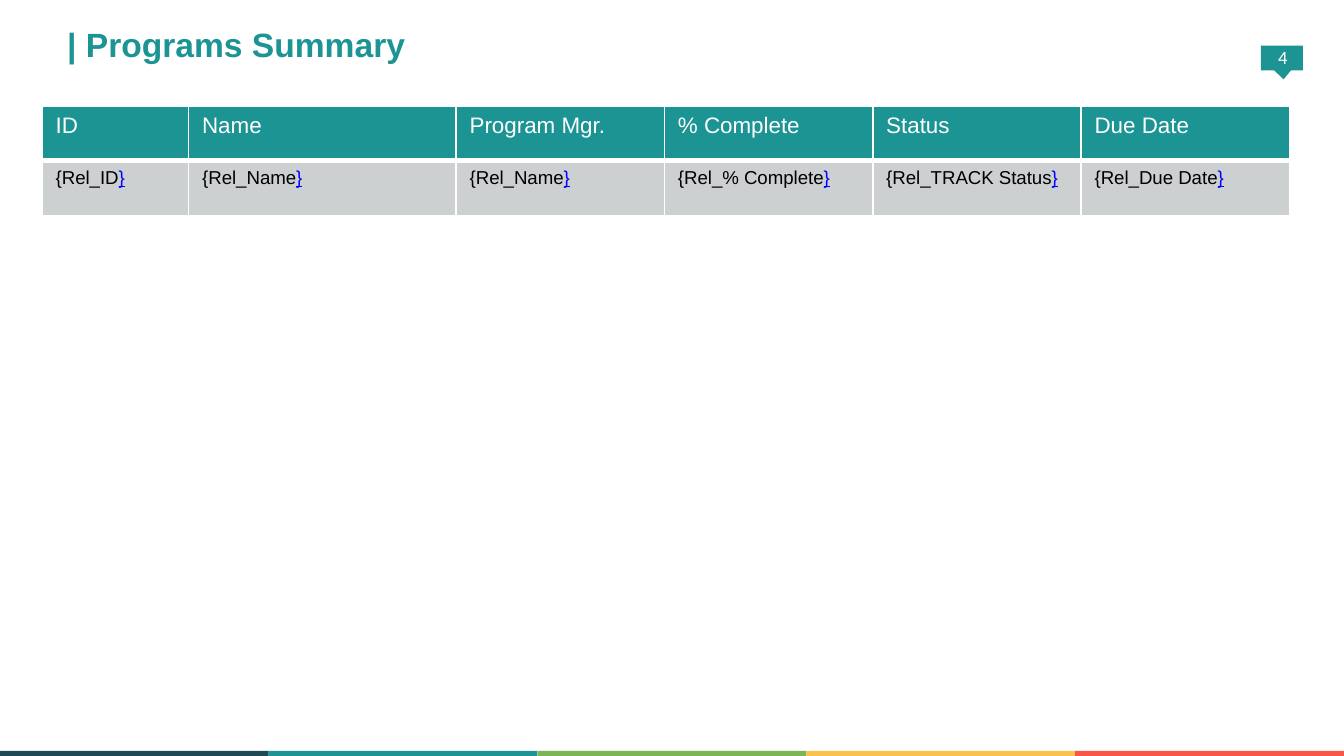
from dataclasses import dataclass

from lxml import etree
from pptx import Presentation
from pptx.dml.color import RGBColor
from pptx.enum import shapes, text
from pptx.oxml import ns
from pptx.util import Pt


@dataclass(frozen=True)
class Theme:
    """Colours, fonts and type sizes of the slide."""
    teal: str = "1C9494"
    white: str = "FFFFFF"
    black: str = "000000"
    link: str = "0000FF"
    row: str = "CDD0D1"
    stripes: tuple = ("1D4A53", "1C9494", "7CB554", "FAC14D", "F95647")
    font: str = "Arial"
    number_font: str = "Calibri"
    title_size: int = 18
    header_size: int = 12
    body_size: int = 10


THEME = Theme()
COLUMNS = (
    ("ID", "{Rel_ID", 78.5),
    ("Name", "{Rel_Name", 143.3),
    ("Program Mgr.", "{Rel_Name", 111.6),
    ("% Complete", "{Rel_% Complete", 111.6),
    ("Status", "{Rel_TRACK Status", 111.6),
    ("Due Date", "{Rel_Due Date", 111.6),
)


def add_run(paragraph, wording, size, color, font=THEME.font, bold=False, underline=False):
    """Append one formatted run to a paragraph."""
    run = paragraph.add_run()
    run.text = wording
    run.font.size = Pt(size)
    run.font.name = font
    run.font.bold = bold
    run.font.underline = underline
    run.font.color.rgb = RGBColor.from_string(color)


def add_block(parent, kind, box, color):
    """Add a plain filled shape without line or shadow."""
    block = parent.add_shape(kind, *map(Pt, box))
    block.fill.solid()
    block.fill.fore_color.rgb = RGBColor.from_string(color)
    block.line.fill.background()
    block.shadow.inherit = False
    return block


def set_frame(frame, anchor, insets):
    """Set anchor and left, top, right and bottom insets of a text frame."""
    frame.word_wrap = True
    frame.auto_size = text.MSO_AUTO_SIZE.NONE
    frame.vertical_anchor = anchor
    (frame.margin_left, frame.margin_top,
     frame.margin_right, frame.margin_bottom) = map(Pt, insets)


def add_footer_stripe(slide, box):
    """Divide the box into equal coloured bands."""
    left, top, width, height = box
    band = width / len(THEME.stripes)
    stripe = slide.shapes.add_group_shape()
    for i, color in enumerate(THEME.stripes):
        add_block(stripe.shapes, shapes.MSO_SHAPE.RECTANGLE,
                  (left + i * band, top, band, height), color)


def add_page_badge(slide, box, number):
    """Draw the page number on a flag with a downward pointer."""
    left, top, width, height = box
    add_block(slide.shapes, shapes.MSO_SHAPE.RECTANGLE,
              (left, top, width, height), THEME.teal)
    pointer = add_block(slide.shapes, shapes.MSO_SHAPE.ISOSCELES_TRIANGLE,
                        (left + 0.5, top + 5.8, width, 12.2), THEME.teal)
    pointer.rotation = 176.8
    label = slide.shapes.add_textbox(Pt(left + 1.2), Pt(top - 2.9), Pt(21), Pt(21.6))
    set_frame(label.text_frame, text.MSO_ANCHOR.MIDDLE, (0, 0, 0, 3.6))
    paragraph = label.text_frame.paragraphs[0]
    paragraph.alignment = text.PP_ALIGN.CENTER
    add_run(paragraph, number, THEME.body_size, THEME.white, THEME.number_font)


def place_title(slide, box, wording):
    """Move and format the title placeholder."""
    title = slide.shapes.title
    title.left, title.top, title.width, title.height = map(Pt, box)
    set_frame(title.text_frame, text.MSO_ANCHOR.TOP, (0, 0, 7.2, 0))
    paragraph = title.text_frame.paragraphs[0]
    paragraph.alignment = text.PP_ALIGN.LEFT
    add_run(paragraph, wording, THEME.title_size, THEME.teal, bold=True)


def style_cell(cell, color, bottom):
    """Give a cell white borders and a solid fill."""
    properties = cell._tc.get_or_add_tcPr()
    for side, weight in (("L", 1), ("R", 1), ("T", 1), ("B", bottom)):
        border = etree.SubElement(properties, ns.qn(f"a:ln{side}"), w=str(Pt(weight)))
        fill = etree.SubElement(border, ns.qn("a:solidFill"))
        etree.SubElement(fill, ns.qn("a:srgbClr"), val=THEME.white)
    cell.fill.solid()
    cell.fill.fore_color.rgb = RGBColor.from_string(color)


def add_programs_table(slide, box):
    """Add the programs table with a header and a field row."""
    programs = slide.shapes.add_table(2, len(COLUMNS), *map(Pt, box)).table
    for row in programs.rows:
        row.height = Pt(box[3] / 2)
    for i, (heading, field, width) in enumerate(COLUMNS):
        programs.columns[i].width = Pt(width)
        header, body = programs.cell(0, i), programs.cell(1, i)
        style_cell(header, THEME.teal, 3)
        style_cell(body, THEME.row, 1)
        add_run(header.text_frame.paragraphs[0], heading, THEME.header_size, THEME.white)
        paragraph = body.text_frame.paragraphs[0]
        add_run(paragraph, field, THEME.body_size, THEME.black)
        add_run(paragraph, "}", THEME.body_size, THEME.link, underline=True)


def main():
    """Build and save the slide."""
    deck = Presentation()
    deck.slide_width, deck.slide_height = Pt(720), Pt(405)
    slide = deck.slides.add_slide(deck.slide_layouts[5])
    add_footer_stripe(slide, (0, 402.3, 720, 5.8))
    add_page_badge(slide, (675.5, 24.5, 22.5, 13.2), "4")
    place_title(slide, (36, 13, 540.7, 28.8), "| Programs Summary")
    add_programs_table(slide, (22.6, 57, 668.2, 58.4))
    deck.save("out.pptx")


if __name__ == "__main__":
    main()
